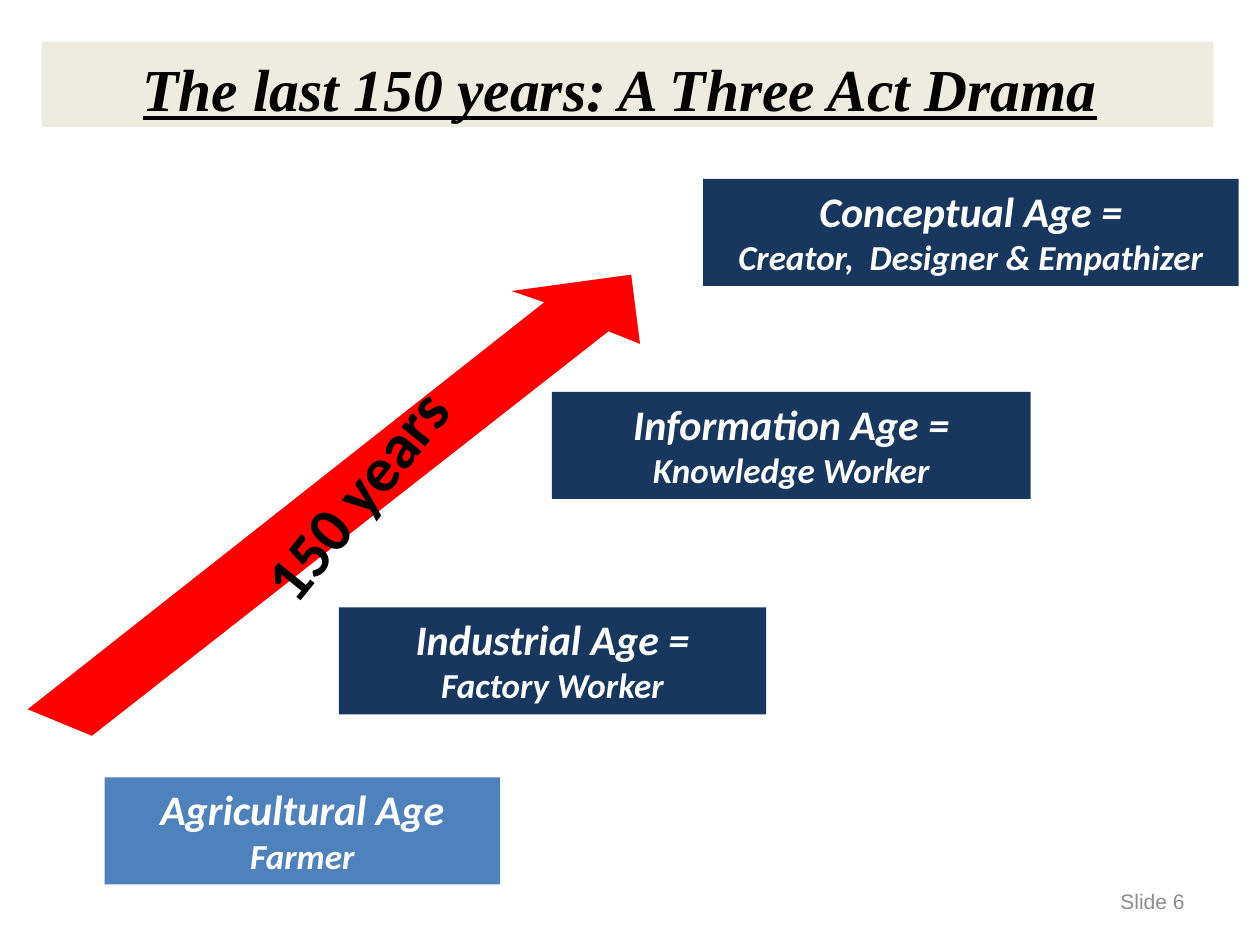
import pptx
import pptx.util
import pptx.dml.color
import pptx.enum.shapes
import pptx.enum.text
from pptx.util import Inches

ALIGN = pptx.enum.text.PP_ALIGN
ANCHOR = pptx.enum.text.MSO_ANCHOR


def color(hex_string):
    return pptx.dml.color.RGBColor.from_string(hex_string)


def format_text(paragraph, font_name, size, hex_string, align=ALIGN.CENTER, bold=True, italic=True):
    paragraph.alignment = align
    for run in paragraph.runs:
        run.font.name = font_name
        run.font.size = pptx.util.Pt(size)
        run.font.bold = bold
        run.font.italic = italic
        run.font.color.rgb = color(hex_string)


prs = pptx.Presentation()
prs.slide_width, prs.slide_height = Inches(10), Inches(7.5)
slide = prs.slides.add_slide(prs.slide_layouts[5])

# Title band
title = slide.shapes.title
title.left, title.top = Inches(0.33), Inches(0.33)
title.width, title.height = Inches(9.3), Inches(0.68)
title.fill.solid()
title.fill.fore_color.rgb = color("EEECE1")
title_frame = title.text_frame
title_frame.text = "The last 150 years: A Three Act Drama"
title_frame.auto_size = pptx.enum.text.MSO_AUTO_SIZE.NONE
title_frame.vertical_anchor = ANCHOR.MIDDLE
title_frame.margin_right = Inches(0.22)
title_frame.margin_top, title_frame.margin_bottom = Inches(0.1), Inches(0.05)
format_text(title_frame.paragraphs[0], "Times New Roman", 34, "000000")
title_frame.paragraphs[0].runs[0].font.underline = True

# The ages, rising from bottom left to top right
ages = [
    ("Agricultural Age", "Farmer", 0.83, 6.17, 3.14, "4F81BD"),
    ("Industrial Age =", "Factory Worker", 2.69, 4.82, 3.39, "17375E"),
    ("Information Age =", "Knowledge Worker", 4.38, 3.11, 3.8, "17375E"),
    ("Conceptual Age =", "Creator,  Designer & Empathizer", 5.58, 1.42, 4.25, "17375E"),
]
for age, worker, left, top, width, fill in ages:
    age_box = slide.shapes.add_shape(
        pptx.enum.shapes.MSO_SHAPE.RECTANGLE,
        Inches(left), Inches(top), Inches(width), Inches(0.85))
    age_box.shadow.inherit = False
    age_box.fill.solid()
    age_box.fill.fore_color.rgb = color(fill)
    age_box.line.fill.background()
    age_frame = age_box.text_frame
    age_frame.text = f"{age}\n{worker}"
    age_frame.word_wrap = True
    age_frame.vertical_anchor = ANCHOR.TOP
    age_frame.margin_left = age_frame.margin_right = Inches(0.11)
    for paragraph, size in zip(age_frame.paragraphs, (24, 20)):
        format_text(paragraph, "Calibri", size, "FFFFFF")

# Slanted arrow, starting at its tip
arrow_points = [(5.01, 2.18), (5.08, 2.73), (4.83, 2.63), (0.73, 5.84),
                (0.22, 5.63), (4.32, 2.4), (4.06, 2.31)]
outline = slide.shapes.build_freeform(
    *[Inches(value) for value in arrow_points[0]])
outline.add_line_segments(
    [(Inches(x), Inches(y)) for x, y in arrow_points[1:]], close=True)
arrow = outline.convert_to_shape()
arrow.shadow.inherit = False
arrow.fill.solid()
arrow.fill.fore_color.rgb = color("FF0000")
arrow.line.fill.background()

# Time span along the arrow
span = slide.shapes.add_textbox(Inches(1.72), Inches(3.57), Inches(2.2), Inches(0.7))
span.rotation = -51
span.text_frame.text = "150 years"
span.text_frame.word_wrap = True
span.text_frame.vertical_anchor = ANCHOR.MIDDLE
format_text(span.text_frame.paragraphs[0], "Calibri", 36, "000000", italic=False)

# Slide number
number = slide.shapes.add_textbox(Inches(7.17), Inches(6.95), Inches(2.33), Inches(0.4))
number.text_frame.text = "Slide 6"
number.text_frame.word_wrap = True
number.text_frame.vertical_anchor = ANCHOR.MIDDLE
format_text(number.text_frame.paragraphs[0], "Arial", 12, "8C8C8C",
            align=ALIGN.RIGHT, bold=False, italic=False)

prs.save("out.pptx")
